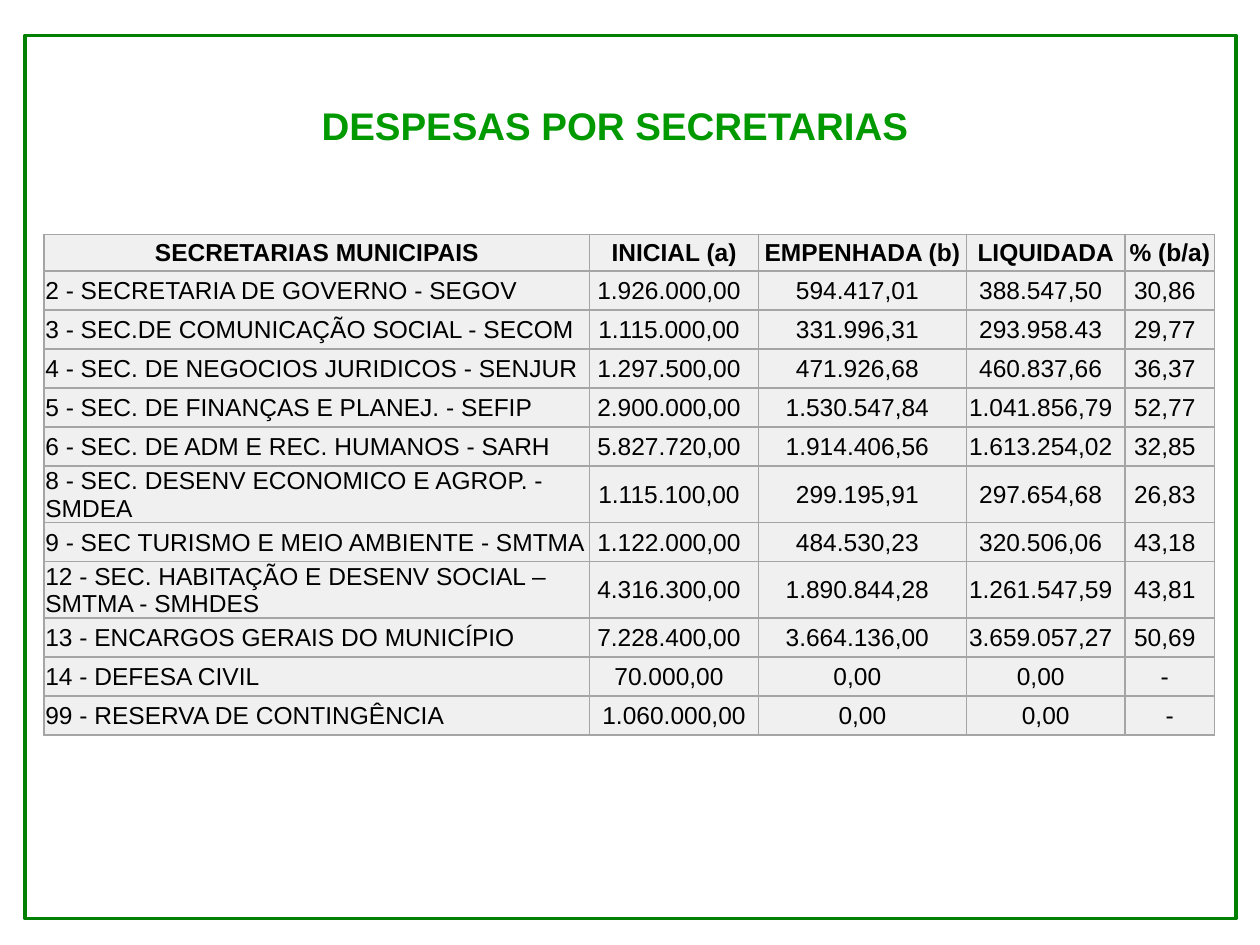
from lxml import etree
from pptx import Presentation
from pptx.dml.color import RGBColor
from pptx.enum.shapes import MSO_SHAPE
from pptx.enum.text import MSO_ANCHOR, PP_ALIGN
from pptx.oxml.ns import qn
from pptx.util import Inches, Pt

CENTER, LEFT = PP_ALIGN.CENTER, PP_ALIGN.LEFT
MIDDLE = MSO_ANCHOR.MIDDLE
RECTANGLE = MSO_SHAPE.RECTANGLE
TITLE_ONLY = 5

COLORS = {"frame": "008000", "title": "009900", "text": "000000",
          "cell": "F0F0F0", "border": "A5A5A5"}
FONT = "Arial"
COLUMN_WIDTHS = [4.33, 1.34, 1.65, 1.26, 0.71]
HEADER_HEIGHT, ROW_HEIGHT = 0.29, 0.31
MARGIN, NUMBER_MARGIN = 0.01, 0.09

ROWS = [
    ("SECRETARIAS MUNICIPAIS", "INICIAL (a)", "EMPENHADA (b)", "LIQUIDADA", "% (b/a)"),
    ("2 - SECRETARIA DE GOVERNO - SEGOV", "1.926.000,00", "594.417,01", "388.547,50", "30,86"),
    ("3 - SEC.DE COMUNICAÇÃO SOCIAL - SECOM", "1.115.000,00", "331.996,31", "293.958.43", "29,77"),
    ("4 - SEC. DE NEGOCIOS JURIDICOS - SENJUR", "1.297.500,00", "471.926,68", "460.837,66", "36,37"),
    ("5 - SEC. DE FINANÇAS E PLANEJ. - SEFIP", "2.900.000,00", "1.530.547,84", "1.041.856,79", "52,77"),
    ("6 - SEC. DE ADM E REC. HUMANOS - SARH", "5.827.720,00", "1.914.406,56", "1.613.254,02", "32,85"),
    ("8 - SEC. DESENV ECONOMICO E AGROP. - SMDEA", "1.115.100,00", "299.195,91", "297.654,68", "26,83"),
    ("9 - SEC TURISMO E MEIO AMBIENTE - SMTMA", "1.122.000,00", "484.530,23", "320.506,06", "43,18"),
    ("12 - SEC. HABITAÇÃO E DESENV SOCIAL – SMTMA - SMHDES",
     "4.316.300,00", "1.890.844,28", "1.261.547,59", "43,81"),
    ("13 - ENCARGOS GERAIS DO MUNICÍPIO", "7.228.400,00", "3.664.136,00", "3.659.057,27", "50,69"),
    ("14 - DEFESA CIVIL", "70.000,00", "0,00", "0,00", "-"),
    ("99 - RESERVA DE CONTINGÊNCIA", "1.060.000,00", "0,00", "0,00", "-"),
]


def format_paragraph(para, size, color, bold, align):
    para.alignment = align
    para.font.name = FONT
    para.font.size = Pt(size)
    para.font.bold = bold
    para.font.color.rgb = RGBColor.from_string(COLORS[color])


def fill_cell(cell):
    """Give the cell its borders and then its fill, in the order the schema asks."""
    properties = cell._tc.get_or_add_tcPr()
    for side in ("a:lnL", "a:lnR", "a:lnT", "a:lnB"):
        line = etree.SubElement(properties, qn(side), w=str(Pt(1)))
        solid = etree.SubElement(line, qn("a:solidFill"))
        etree.SubElement(solid, qn("a:srgbClr"), val=COLORS["border"])
    cell.fill.solid()
    cell.fill.fore_color.rgb = RGBColor.from_string(COLORS["cell"])


deck = Presentation()
deck.slide_width, deck.slide_height = Inches(10), Inches(7.5)
page = deck.slides.add_slide(deck.slide_layouts[TITLE_ONLY])

frame = page.shapes.add_shape(RECTANGLE, Inches(0.2), Inches(0.28), Inches(9.61), Inches(7.01))
frame.shadow.inherit = False
frame.fill.background()
frame.line.color.rgb = RGBColor.from_string(COLORS["frame"])
frame.line.width = Pt(2)

title = page.shapes.title
title.left, title.top = Inches(0.91), Inches(0.76)
title.width, title.height = Inches(8.11), Inches(0.47)
title.text_frame.margin_right = Inches(0.27)
title.text_frame.vertical_anchor = MIDDLE
title.text_frame.text = "DESPESAS POR SECRETARIAS"
format_paragraph(title.text_frame.paragraphs[0], 22, "title", True, CENTER)

table = page.shapes.add_table(
    len(ROWS), len(COLUMN_WIDTHS), Inches(0.35), Inches(1.86), Inches(sum(COLUMN_WIDTHS)),
    Inches(HEADER_HEIGHT + ROW_HEIGHT * (len(ROWS) - 1))).table
for column, width in zip(table.columns, COLUMN_WIDTHS):
    column.width = Inches(width)

last_row = len(ROWS) - 1
for r, values in enumerate(ROWS):
    is_header = r == 0
    table.rows[r].height = Inches(HEADER_HEIGHT if is_header else ROW_HEIGHT)
    for c, value in enumerate(values):
        cell = table.cell(r, c)
        is_inset = c > 0 and 0 < r < last_row
        cell.margin_left = cell.margin_top = Inches(MARGIN)
        cell.margin_right = Inches(NUMBER_MARGIN if is_inset else MARGIN)
        cell.margin_bottom = 0
        cell.vertical_anchor = MIDDLE
        fill_cell(cell)
        cell.text = value
        align = CENTER if is_header or c > 0 else LEFT
        format_paragraph(cell.text_frame.paragraphs[0], 14, "text", is_header, align)

deck.save("out.pptx")
